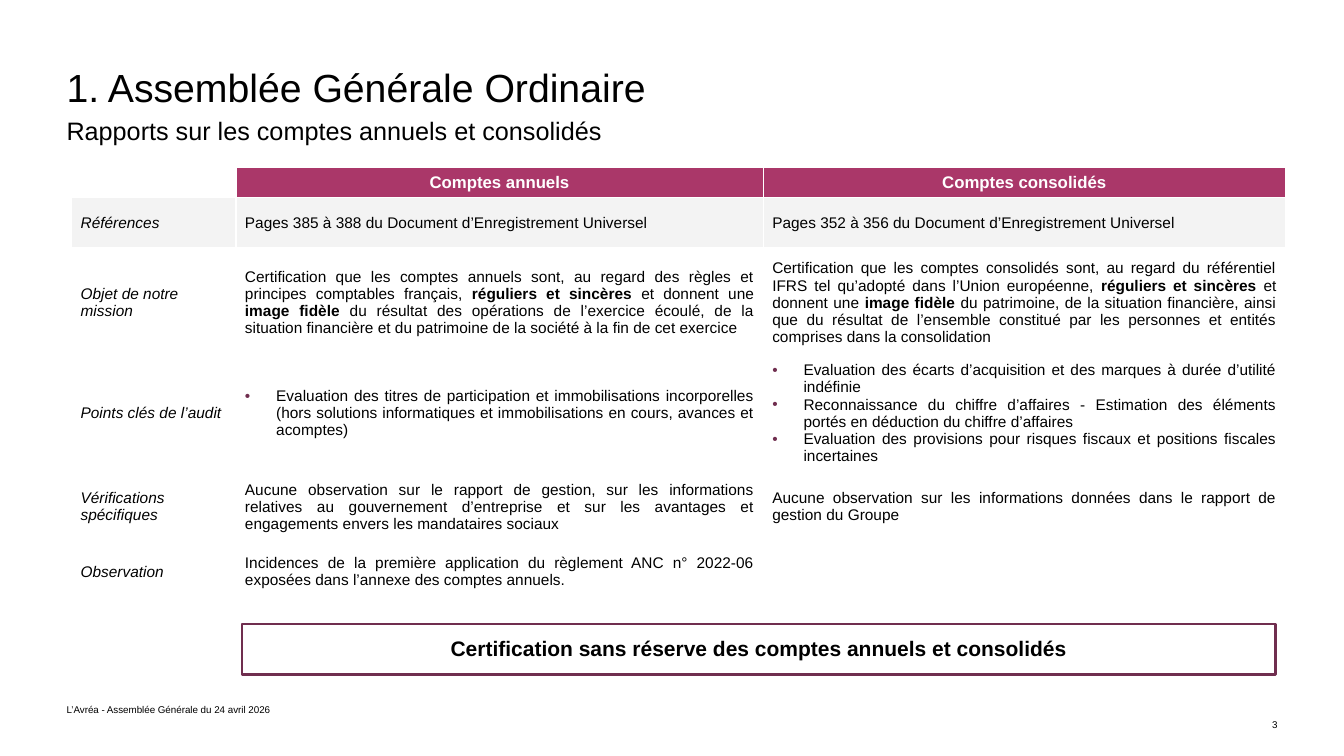
from lxml import etree
from pptx import Presentation
from pptx.dml.color import RGBColor
from pptx.enum.shapes import MSO_SHAPE
from pptx.enum.text import MSO_ANCHOR, PP_ALIGN
from pptx.oxml.ns import qn
from pptx.util import Inches, Pt

LEFT, CENTER, RIGHT, JUSTIFY = PP_ALIGN.LEFT, PP_ALIGN.CENTER, PP_ALIGN.RIGHT, PP_ALIGN.JUSTIFY
TOP, MIDDLE, BOTTOM = MSO_ANCHOR.TOP, MSO_ANCHOR.MIDDLE, MSO_ANCHOR.BOTTOM
BLACK = RGBColor(0x00, 0x00, 0x00)
WHITE = RGBColor(0xFF, 0xFF, 0xFF)
RASPBERRY = RGBColor(0xAA, 0x37, 0x69)
PLUM = RGBColor(0x70, 0x2E, 0x4F)
PALE_GREY = RGBColor(0xF3, 0xF3, 0xF3)
FONT = "Arial"

TITLE = "1. Assemblée Générale Ordinaire"
SUBTITLE = "Rapports sur les comptes annuels et consolidés"
CONCLUSION = "Certification sans réserve des comptes annuels et consolidés"
FOOTER = "L’Avréa - Assemblée Générale du 24 avril 2026"
PAGE_NUMBER = "3"

# Bold passages stand between double asterisks; a list becomes bullets.
ROWS = [
    ("", "Comptes annuels", "Comptes consolidés"),
    ("Références",
     "Pages 385 à 388 du Document d’Enregistrement Universel",
     "Pages 352 à 356 du Document d’Enregistrement Universel"),
    ("Objet de notre mission",
     "Certification que les comptes annuels sont, au regard des règles et principes "
     "comptables français, **réguliers et sincères** et donnent une **image fidèle **du "
     "résultat des opérations de l’exercice écoulé, de la situation financière et du "
     "patrimoine de la société à la fin de cet exercice",
     "Certification que les comptes consolidés sont, au regard du référentiel IFRS tel "
     "qu’adopté dans l’Union européenne, **réguliers et sincères **et donnent une "
     "**image fidèle **du patrimoine, de la situation financière, ainsi que du résultat de "
     "l’ensemble constitué par les personnes et entités comprises dans la consolidation"),
    ("Points clés de l’audit",
     ["Evaluation des titres de participation et immobilisations incorporelles (hors "
      "solutions informatiques et immobilisations en cours, avances et acomptes)"],
     ["Evaluation des écarts d’acquisition et des marques à durée d’utilité indéfinie",
      "Reconnaissance du chiffre d’affaires - Estimation des éléments portés en déduction "
      "du chiffre d’affaires",
      "Evaluation des provisions pour risques fiscaux et positions fiscales incertaines"]),
    ("Vérifications spécifiques",
     "Aucune observation sur le rapport de gestion, sur les informations relatives au "
     "gouvernement d’entreprise et sur les avantages et engagements envers les mandataires "
     "sociaux",
     "Aucune observation sur les informations données dans le rapport de gestion du Groupe"),
    ("Observation",
     "Incidences de la première application du règlement ANC n° 2022-06 exposées dans "
     "l’annexe des comptes annuels.",
     ""),
]
COLUMN_WIDTHS = (1.63, 5.23, 5.18)
ROW_HEIGHTS = (0.3, 0.5, 1.09, 1.09, 0.76, 0.53)

MARGIN = 0.66
CONCLUSION_LEFT, CONCLUSION_WIDTH = 2.4, 10.25


def set_all(target, values):
    for name, value in values.items():
        setattr(target, name, value)


def write(paragraph, text, size, color=BLACK, **styles):
    """Add the text as runs, with the passages between ** in bold."""
    for index, passage in enumerate(text.split("**")):
        if passage:
            span = paragraph.add_run()
            span.text = passage
            set_all(span.font, {"name": FONT, "size": Pt(size), "bold": index % 2 == 1, **styles})
            span.font.color.rgb = color


def fill_box(box, place, text, size, anchor=TOP, align=LEFT, spacing=1.0, insets=(0, 0), **styles):
    set_all(box, dict(zip(("left", "top", "width", "height"), map(Inches, place))))
    side, edge = map(Inches, insets)
    frame = box.text_frame
    set_all(frame, {"word_wrap": True, "vertical_anchor": anchor, "margin_left": side,
                    "margin_right": side, "margin_top": edge, "margin_bottom": edge})
    para = frame.paragraphs[0]
    set_all(para, {"alignment": align, "line_spacing": spacing, "space_before": Pt(0)})
    write(para, text, size, **styles)


def add_bullet(paragraph):
    properties = paragraph._p.get_or_add_pPr()
    properties.set("marL", str(Inches(0.31)))
    properties.set("indent", str(Inches(-0.31)))
    color = etree.SubElement(properties, qn("a:buClr"))
    etree.SubElement(color, qn("a:srgbClr"), val=str(PLUM))
    etree.SubElement(properties, qn("a:buFont"), typeface=FONT)
    etree.SubElement(properties, qn("a:buChar"), char="•")


def fill_cell(cell, content, row, column):
    set_all(cell, {"vertical_anchor": MIDDLE, "margin_left": Inches(0.09),
                   "margin_right": Inches(0.09), "margin_top": Inches(0.04),
                   "margin_bottom": Inches(0.04)})
    cell.fill.solid()
    header = row == 0 and column > 0
    cell.fill.fore_color.rgb = RASPBERRY if header else PALE_GREY if row == 1 else WHITE
    bulleted = isinstance(content, list)
    for index, text in enumerate(content if bulleted else [content]):
        frame = cell.text_frame
        para = frame.add_paragraph() if index else frame.paragraphs[0]
        para.alignment = CENTER if header else JUSTIFY if row > 1 and column else LEFT
        if bulleted:
            add_bullet(para)
        if header:
            write(para, text, 12, WHITE, bold=True)
        elif text:
            write(para, text, 11, italic=column == 0)
        else:
            etree.SubElement(para._p, qn("a:endParaRPr"), sz="1100")


def add_accounts_table(page):
    frame = page.shapes.add_table(len(ROWS), len(COLUMN_WIDTHS), Inches(0.71), Inches(1.66),
                                  Inches(sum(COLUMN_WIDTHS)), Inches(sum(ROW_HEIGHTS)))
    table = frame.table
    table.horz_banding = False
    for column, width in zip(table.columns, COLUMN_WIDTHS):
        column.width = Inches(width)
    for row, height in zip(table.rows, ROW_HEIGHTS):
        row.height = Inches(height)
    for row, contents in enumerate(ROWS):
        for column, content in enumerate(contents):
            fill_cell(table.cell(row, column), content, row, column)


def add_conclusion_frame(page):
    frame = page.shapes.add_shape(MSO_SHAPE.RECTANGLE, Inches(CONCLUSION_LEFT), Inches(6.19),
                                  Inches(CONCLUSION_WIDTH), Inches(0.5))
    frame.shadow.inherit = False
    frame.fill.background()
    frame.line.color.rgb = PLUM
    frame.line.width = Pt(2)


def add_text(page, place, text, size, **layout):
    box = page.shapes.add_textbox(*map(Inches, place))
    fill_box(box, place, text, size, **layout)


def main():
    deck = Presentation()
    deck.slide_width, deck.slide_height = Inches(13.33), Inches(7.5)
    page = deck.slides.add_slide(deck.slide_layouts[0])
    title, subtitle = page.placeholders
    fill_box(title, (MARGIN, 0.7, 9, 0.5), TITLE, 28, spacing=0.85)
    fill_box(subtitle, (MARGIN, 1.19, 9, 0.32), SUBTITLE, 18, spacing=0.85)
    add_conclusion_frame(page)
    add_accounts_table(page)
    add_text(page, (CONCLUSION_LEFT, 6.31, CONCLUSION_WIDTH, 0.18), CONCLUSION, 15,
             align=CENTER, spacing=0.78, insets=(0.1, 0.05), bold=True)
    add_text(page, (MARGIN, 6.95, 4.35, 0.15), FOOTER, 7, anchor=BOTTOM)
    add_text(page, (11.27, 7.1, 1.4, 0.15), PAGE_NUMBER, 7, anchor=BOTTOM, align=RIGHT)
    deck.save("out.pptx")


if __name__ == "__main__":
    main()
